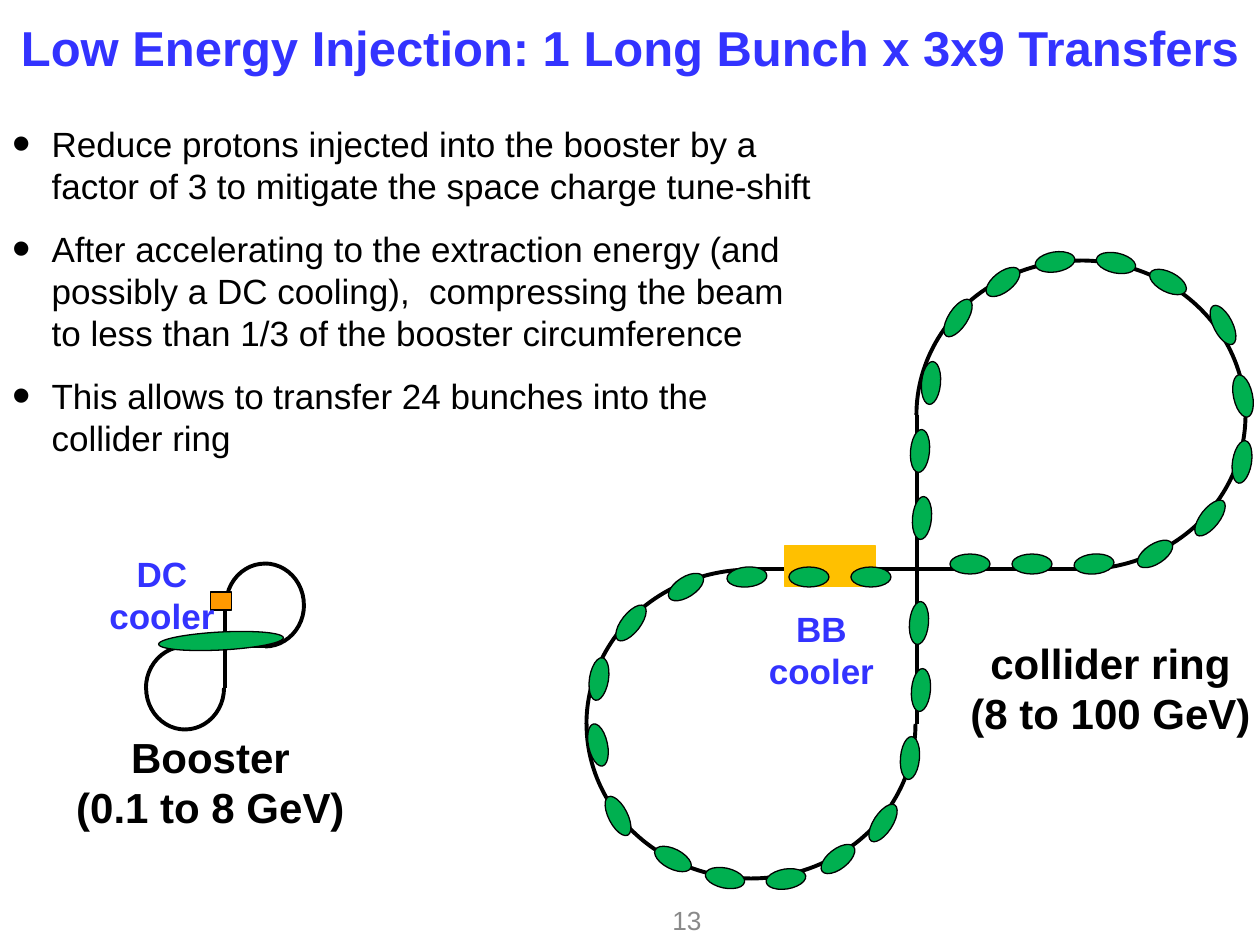
from lxml import etree
from pptx import Presentation
from pptx import util as u
from pptx.dml.color import RGBColor
from pptx.enum import shapes, text
from pptx.oxml.ns import qn

SCALE = 914400 / 126
INK = {"black": "000000", "blue": "3333FF", "green": "00B050",
       "gold": "FFC000", "orange": "FF9900", "grey": "898989"}
SHAPE = shapes.MSO_SHAPE
ALIGN = text.PP_ALIGN
MID = text.MSO_ANCHOR.MIDDLE

TITLE = "Low Energy Injection: 1 Long Bunch x 3x9 Transfers"
POINTS = [
    "Reduce protons injected into the booster by a factor of 3 to mitigate "
    "the space charge tune-shift",
    "After accelerating to the extraction energy (and possibly a DC cooling),  "
    "compressing the beam to less than 1/3 of the booster circumference",
    "This allows to transfer 24 bunches into the collider ring",
]
BEADS = [
    (922, 518, 5), (920, 451, 5), (931, 383, 5), (958, 318, 33),
    (1003, 282, 52), (1055, 262, 81), (1116, 263, 102), (1168, 282, 117),
    (970, 564, 90), (1032, 564, 90), (1094, 564, 85), (1155, 554, 57),
    (1210, 518, 38), (1242, 462, 9), (1243, 396, 168), (1223, 325, 153),
]


def px(*nums):
    return [u.Emu(round(n * SCALE)) for n in nums]


def tint(name):
    return RGBColor.from_string(INK[name])


def style(para, size, color, bold=False, align=None):
    para.alignment = align
    font = para.font
    font.name = "Arial"
    font.size = u.Pt(size)
    font.bold = bold
    font.color.rgb = tint(color)


def place(holder, box):
    holder.left, holder.top, holder.width, holder.height = px(*box)
    holder.text_frame.auto_size = text.MSO_AUTO_SIZE.NONE
    return holder.text_frame


def head(slide):
    frame = place(slide.shapes.title, (0, 0, 1260, 94))
    frame.vertical_anchor = MID
    frame.text = TITLE
    style(frame.paragraphs[0], 28, "blue", True, ALIGN.CENTER)


def points(slide):
    frame = place(slide.placeholders[1], (0, 116, 829, 357))
    frame.vertical_anchor = text.MSO_ANCHOR.TOP
    frame.text = "\n".join(POINTS)
    for i, para in enumerate(frame.paragraphs):
        props = para._p.get_or_add_pPr()
        indent, = px(39)
        props.set("marL", str(indent))
        props.set("indent", str(-indent))
        etree.SubElement(props, qn("a:buSzPct"), val="150000")
        etree.SubElement(props, qn("a:buChar"), char="•")
        para.space_before = u.Pt(12 if i else 0)
        style(para, 20, "black", align=ALIGN.LEFT)


def label(pool, box, words, size, color, bold=True, align=ALIGN.CENTER):
    frame = pool.add_textbox(*px(*box)).text_frame
    frame.word_wrap = True
    frame.text = words
    for para in frame.paragraphs:
        style(para, size, color, bold, align)
    return frame


def line(pool, *ends):
    link = pool.add_connector(shapes.MSO_CONNECTOR.STRAIGHT, *px(*ends))
    link.line.color.rgb = tint("black")
    link.line.width = u.Pt(2.25)
    etree.SubElement(link._element.spPr, qn("a:effectLst"))


def form(pool, kind, mid, size, turn=0, fill=None, edge="black", width=0.75):
    (x, y), (w, h) = mid, size
    item = pool.add_shape(kind, *px(x - w / 2, y - h / 2, w, h))
    item.shadow.inherit = False
    item.rotation = turn
    if fill:
        item.fill.solid()
        item.fill.fore_color.rgb = tint(fill)
    else:
        item.fill.background()
    item.line.color.rgb = tint(edge)
    item.line.width = u.Pt(width)


def loop(pool, mid, wide, high, turns):
    for turn in turns:
        size = (high, wide) if turn % 180 else (wide, high)
        form(pool, SHAPE.ARC, mid, size, turn, width=2.25)


def track(pool, upper, lower, wide, high, cross):
    x, y = cross
    line(pool, x, upper[1], x, lower[1])
    loop(pool, upper, wide, high, (0, 270, 90))
    loop(pool, lower, wide, high, (180, 90, 270))
    line(pool, upper[0], y, lower[0], y)


def beads(pool):
    back = [(1841 - x, 1141 - y, turn + 180) for x, y, turn in BEADS]
    for x, y, turn in BEADS + back:
        size = (20, 40) if 50 < turn % 180 < 130 else (19, 43)
        form(pool, SHAPE.OVAL, (x, y), size, turn, "green")


def ring(slide):
    pool = slide.shapes.add_group_shape().shapes
    label(pool, (951, 631, 319, 122), "collider ring\n(8 to 100 GeV)", 24, "black")
    track(pool, (1081, 415), (751, 724), 329, 309, (917, 569))
    form(pool, SHAPE.RECTANGLE, (830, 566), (90, 41), fill="gold", edge="gold")
    label(pool, (746, 601, 151, 105), "BB cooler", 20, "blue")
    beads(pool)


def boost(slide):
    pool = slide.shapes.add_group_shape().shapes
    track(pool, (265, 605), (185, 688), 78, 83, (225, 646))
    label(pool, (53, 725, 315, 115), "Booster\n(0.1 to 8 GeV)", 24, "black")
    form(pool, SHAPE.RECTANGLE, (221, 601), (21, 18), fill="orange")
    label(pool, (94, 546, 136, 88), "DC cooler", 20, "blue")
    form(pool, SHAPE.OVAL, (221, 641), (18, 125), 87, "green")


def main():
    deck = Presentation()
    deck.slide_width, deck.slide_height = px(1260, 945)
    slide = deck.slides.add_slide(deck.slide_layouts[1])
    head(slide)
    points(slide)
    page = label(slide.shapes, (525, 895, 189, 50), "13", 15, "grey",
                 False, ALIGN.RIGHT)
    page.vertical_anchor = MID
    ring(slide)
    boost(slide)
    deck.save("out.pptx")


if __name__ == "__main__":
    main()
